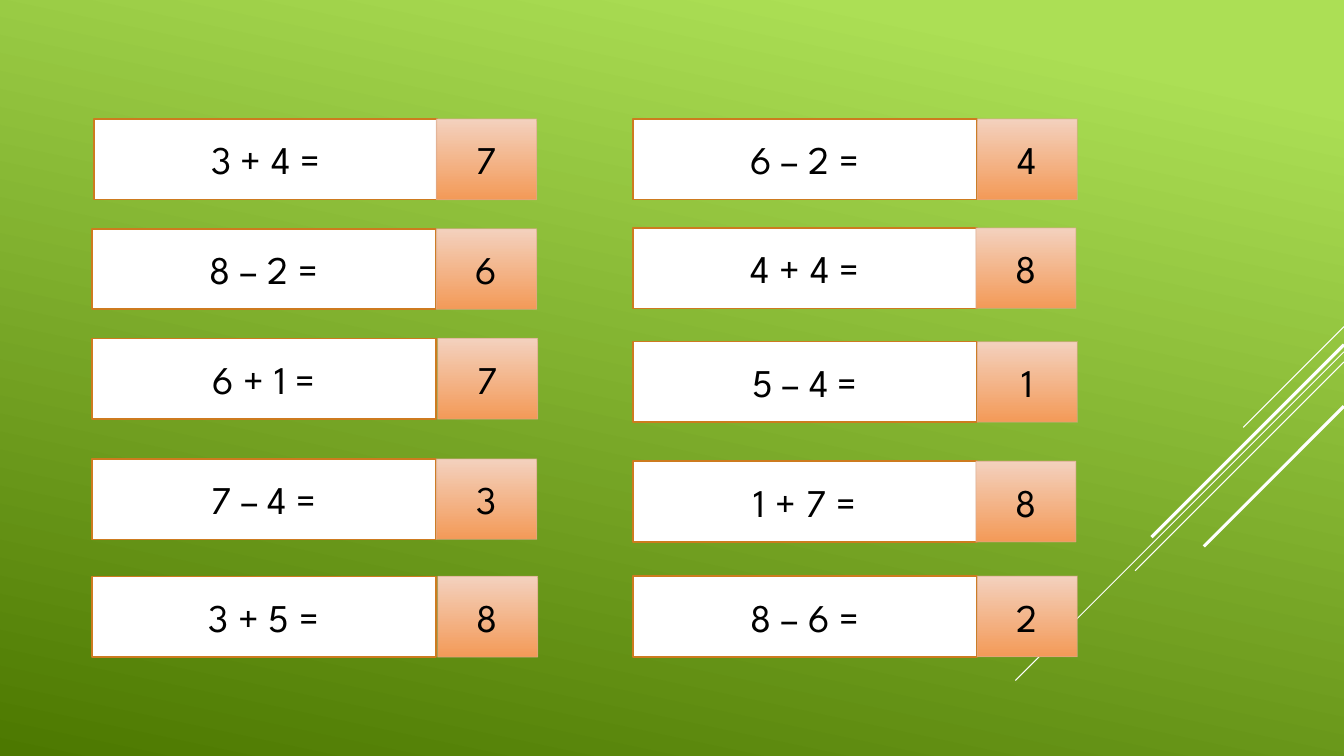
from lxml import etree
from pptx import Presentation
from pptx.dml.color import RGBColor
from pptx.enum.shapes import MSO_CONNECTOR, MSO_SHAPE
from pptx.enum.text import MSO_ANCHOR, PP_ALIGN
from pptx.oxml.ns import qn
from pptx.util import Pt

RECTANGLE = MSO_SHAPE.RECTANGLE
STRAIGHT = MSO_CONNECTOR.STRAIGHT
MIDDLE = MSO_ANCHOR.MIDDLE
CENTER = PP_ALIGN.CENTER

SLIDE_WIDTH, SLIDE_HEIGHT = 960, 540
PROBLEM_WIDTH, ANSWER_WIDTH, ROW_HEIGHT = 245.5, 71.5, 57.6


def color(hex_string):
    return RGBColor.from_string(hex_string)


def add_box(left, top, width, text, line_color, line_width):
    shape = slide.shapes.add_shape(RECTANGLE, Pt(left), Pt(top), Pt(width), Pt(ROW_HEIGHT))
    shape.shadow.inherit = False
    shape.line.color.rgb = color(line_color)
    shape.line.width = Pt(line_width)
    shape.text_frame.vertical_anchor = MIDDLE
    paragraph = shape.text_frame.paragraphs[0]
    paragraph.text = text
    paragraph.alignment = CENTER
    paragraph.font.name = "League Spartan"
    paragraph.font.size = Pt(28)
    paragraph.font.color.rgb = color("000000")
    return shape


presentation = Presentation()
presentation.slide_width = Pt(SLIDE_WIDTH)
presentation.slide_height = Pt(SLIDE_HEIGHT)
slide = presentation.slides.add_slide(presentation.slide_layouts[6])

# Green background gradient; angles here run counter-clockwise
background = slide.background.fill
background.gradient()
background.gradient_angle = 360 - 102
for stop, position, stop_color in zip(background.gradient_stops, (0.1, 1), ("ACDF55", "4C7800")):
    stop.position = position
    stop.color.rgb = color(stop_color)

# Diagonal lines falling at 45 degrees from the right edge: start height, run, width
for top, run, line_width in (
    (233.3, 72, 0.75),
    (251.3, 234.7, 0.75),
    (258.5, 149.2, 0.75),
    (246.2, 137.5, 2.25),
    (290.2, 100.1, 2.25),
):
    diagonal = slide.shapes.add_connector(
        STRAIGHT, Pt(SLIDE_WIDTH), Pt(top), Pt(SLIDE_WIDTH - run), Pt(top + run))
    diagonal.line.color.rgb = color("FFFFFF")
    diagonal.line.width = Pt(line_width)
    etree.SubElement(diagonal._element.spPr, qn("a:effectLst"))

# Sums: problem, answer, left of problem, left of answer, top
sums = (
    ("3 + 4 =", "7", 67, 311.8, 85),
    ("8 – 2 =", "6", 65.7, 311.8, 163.4),
    ("6 + 1 =", "7", 65.7, 312.6, 241.8),
    ("7 – 4 =", "3", 65.7, 311.8, 327.8),
    ("3 + 5 =", "8", 65.7, 312.6, 411.8),
    ("6 – 2 =", "4", 452.2, 698.2, 85),
    ("4 + 4 =", "8", 452.2, 697, 162.8),
    ("5 – 4 =", "1", 452.2, 698.2, 244),
    ("1 + 7 =", "8", 452.2, 697, 329.5),
    ("8 – 6 =", "2", 452.2, 698.2, 411.5),
)
for problem, answer, problem_left, answer_left, top in sums:
    problem_box = add_box(problem_left, top, PROBLEM_WIDTH, problem, "CD7B1F", 1.25)
    problem_box.fill.solid()
    problem_box.fill.fore_color.rgb = color("FFFFFF")

    answer_box = add_box(answer_left, top, ANSWER_WIDTH, answer, "DAA98B", 0.75)
    answer_box.fill.gradient()
    answer_box.fill.gradient_angle = 270
    for stop, position, stop_color in zip(
            answer_box.fill.gradient_stops, (0, 1), ("F3D1BE", "F39A58")):
        stop.position = position
        stop.color.rgb = color(stop_color)
    # Outline at 60 % opacity
    outline_color = answer_box.line._ln.find(".//" + qn("a:srgbClr"))
    etree.SubElement(outline_color, qn("a:alpha"), val="60000")

presentation.save("out.pptx")
